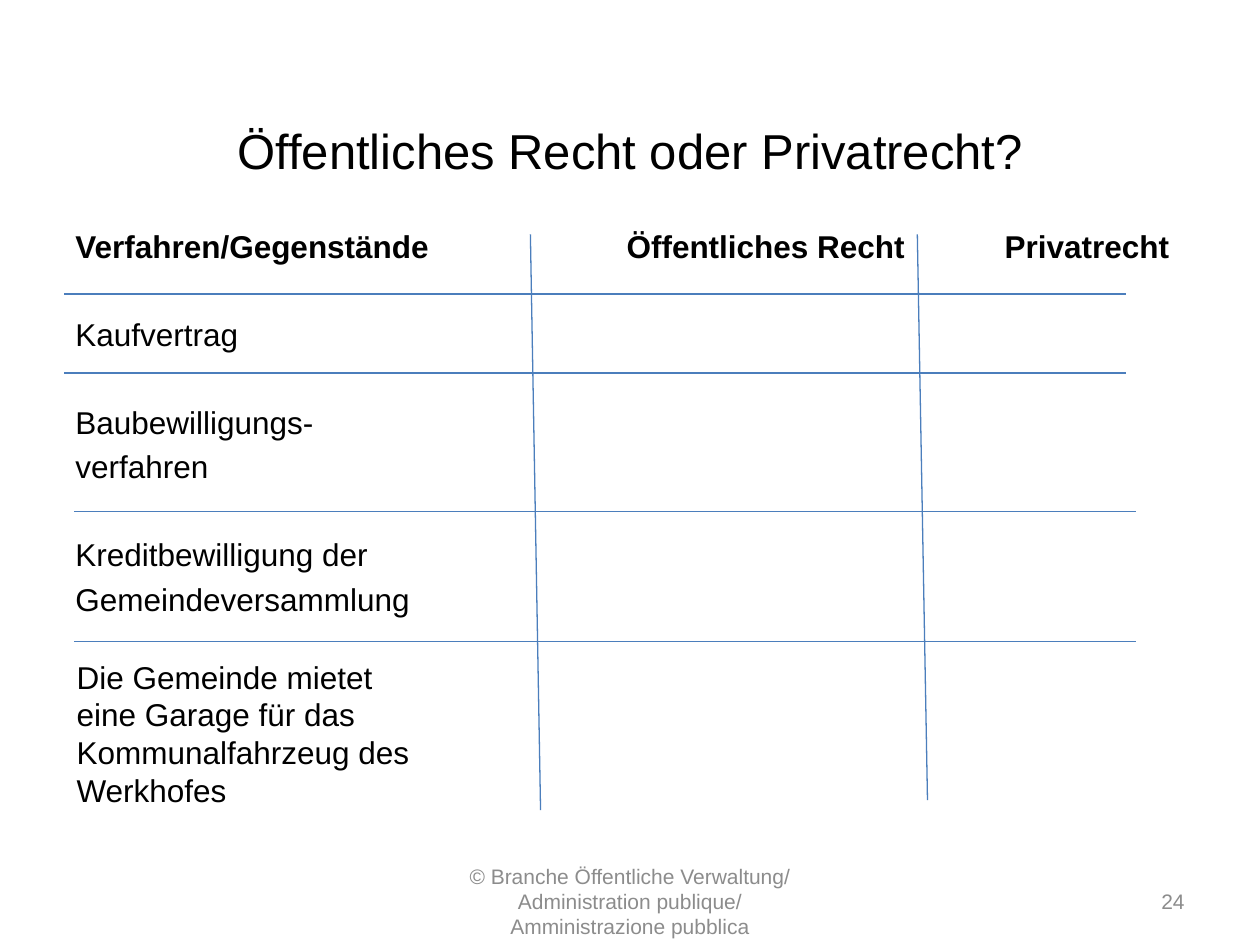
from lxml import etree
from pptx import Presentation
from pptx.dml.color import RGBColor
from pptx.enum.shapes import MSO_CONNECTOR
from pptx.enum.text import MSO_ANCHOR, PP_ALIGN
from pptx.oxml.ns import qn
from pptx.util import Pt

LEFT, CENTER, RIGHT = PP_ALIGN.LEFT, PP_ALIGN.CENTER, PP_ALIGN.RIGHT
TOP, MIDDLE = MSO_ANCHOR.TOP, MSO_ANCHOR.MIDDLE
COLORS = {"text": "000000", "muted": "8C8C8C", "rule": "4B7EBC"}

# Content
TITLE = "Öffentliches Recht oder Privatrecht?"
HEADINGS = "Verfahren/Gegenstände\t\tÖffentliches Recht\tPrivatrecht"
CASES = [
    ["Kaufvertrag"],
    ["Baubewilligungs-", "verfahren"],
    ["Kreditbewilligung der", "Gemeindeversammlung"],
]
GARAGE_CASE = ["Die Gemeinde mietet",
               "eine Garage für das \vKommunalfahrzeug des", "Werkhofes"]
FOOTER = ("© Branche Öffentliche Verwaltung/ Administration publique/ "
          "Amministrazione pubblica")
PAGE_NUMBER = "24"

# Layout in points
LINE_GAP, CASE_GAP = 3.6, 28.8
HEADING_TABS = (243, 315, 531)
RULE_LENGTH = 606.8
ROW_RULES = [(36.7, 168), (36.7, 213.2), (42.5, 292.5), (42.5, 366.5)]
COLUMN_RULES = [(303.1, 462.9), (524.2, 457.2)]
COLUMN_TOP, COLUMN_SLANT = 133.9, 5.8


def format_text(item, size, color="text", bold=False):
    settings = {"name": "Arial", "size": Pt(size), "bold": bold}
    for key, value in settings.items():
        setattr(item.font, key, value)
    item.font.color.rgb = RGBColor.from_string(COLORS[color])


def place(shape, box):
    for key, value in zip(("left", "top", "width", "height"), box):
        setattr(shape, key, Pt(value))


def fill_frame(frame, lines, size, color="text", align=LEFT, anchor=TOP, wrap=True):
    frame.word_wrap = wrap
    frame.vertical_anchor = anchor
    for index, line in enumerate(lines):
        paragraph = frame.paragraphs[0] if index == 0 else frame.add_paragraph()
        paragraph.text = line
        paragraph.alignment = align
        for run in paragraph.runs:
            format_text(run, size, color)


def add_text(slide, box, lines, size, **options):
    frame = slide.shapes.add_textbox(*map(Pt, box)).text_frame
    fill_frame(frame, lines, size, **options)
    return frame


def add_tabs(paragraph, positions):
    stops = etree.SubElement(paragraph._p.get_or_add_pPr(), qn("a:tabLst"))
    for position in positions:
        etree.SubElement(stops, qn("a:tab"), pos=str(Pt(position)), algn="l")


def add_rule(slide, x1, y1, x2, y2):
    rule = slide.shapes.add_connector(
        MSO_CONNECTOR.STRAIGHT, Pt(x1), Pt(y1), Pt(x2), Pt(y2))
    rule.line.color.rgb = RGBColor.from_string(COLORS["rule"])
    rule.line.width = Pt(0.75)
    etree.SubElement(rule._element.spPr, qn("a:effectLst"))


def main():
    deck = Presentation()
    deck.slide_width, deck.slide_height = Pt(720), Pt(540)
    slide = deck.slides.add_slide(deck.slide_layouts[5])

    # Title
    title = slide.shapes.title
    place(title, (36, 60, 648, 51))
    fill_frame(title.text_frame, [TITLE], 28, align=CENTER, anchor=MIDDLE)

    # Headings and cases, with a wider gap before each case
    lines = [HEADINGS] + [line for case in CASES for line in case]
    gaps = [0] + [LINE_GAP if index else CASE_GAP
                  for case in CASES for index in range(len(case))]
    body = add_text(slide, (36, 126, 648, 356.4), lines, 18)
    for paragraph, gap in zip(body.paragraphs, gaps):
        paragraph.space_before = Pt(gap)
    headings = body.paragraphs[0]
    add_tabs(headings, HEADING_TABS)
    for run in headings.runs:
        run.font.bold = True

    # Page number and footer
    add_text(slide, (516, 500.5, 168, 28.8), [PAGE_NUMBER], 12,
             color="muted", align=RIGHT, anchor=MIDDLE)
    add_text(slide, (246, 500.5, 228, 28.8), [FOOTER], 12,
             color="muted", align=CENTER, anchor=MIDDLE)

    # Column and row rules
    for x, bottom in COLUMN_RULES:
        add_rule(slide, x, COLUMN_TOP, x + COLUMN_SLANT, bottom)
    for x, y in ROW_RULES:
        add_rule(slide, x, y, x + RULE_LENGTH, y)

    # Last case
    add_text(slide, (36.7, 372.2, 211.7, 94.3), GARAGE_CASE, 18, wrap=False)

    deck.save("out.pptx")


if __name__ == "__main__":
    main()
